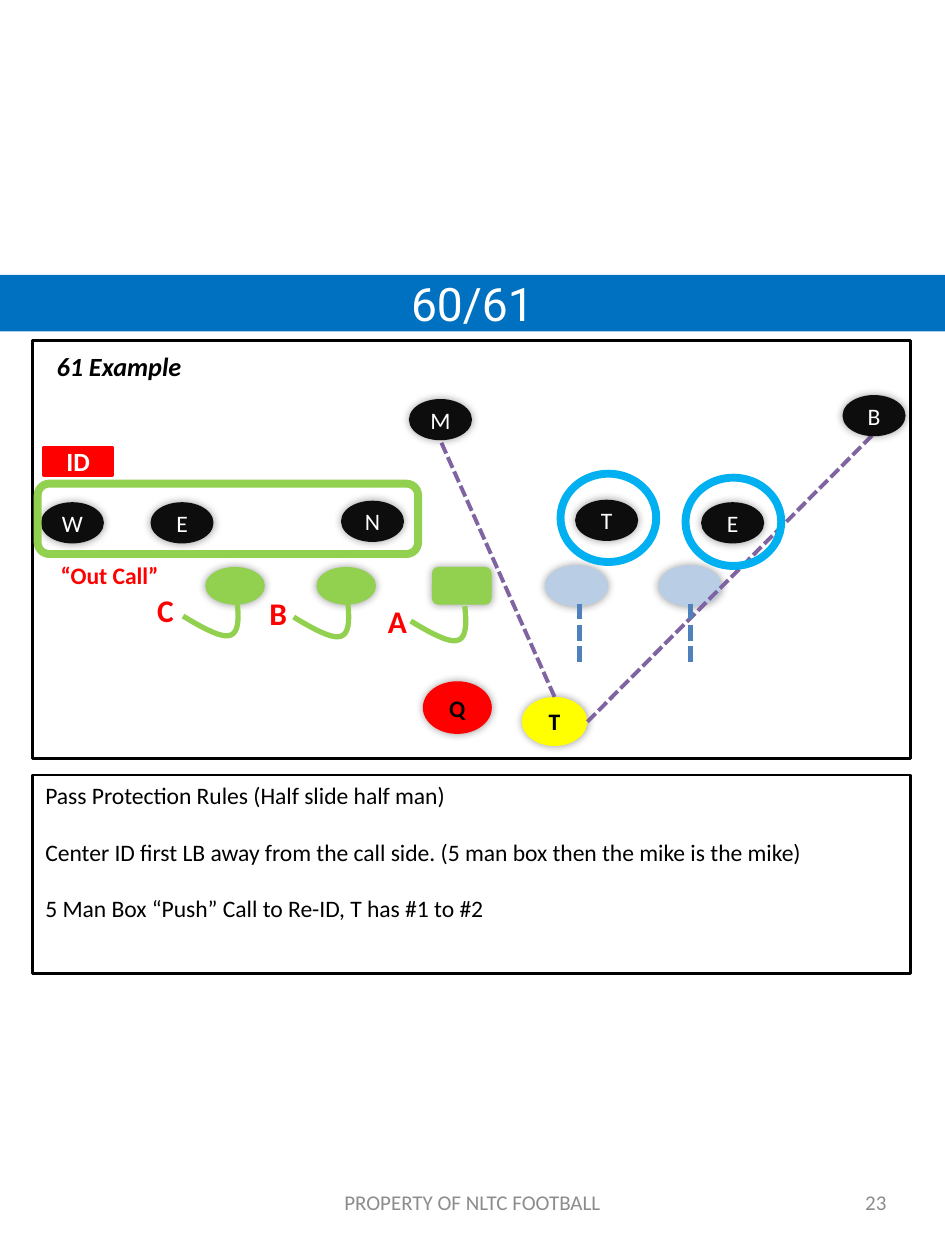
import pptx
import pptx.util
import pptx.dml.color
import pptx.enum.dml
import pptx.enum.shapes
import pptx.enum.text
import pptx.oxml
import pptx.oxml.ns

Cm, Pt = pptx.util.Cm, pptx.util.Pt
KIND = pptx.enum.shapes.MSO_SHAPE
ALIGN = pptx.enum.text.PP_ALIGN
MID = pptx.enum.text.MSO_ANCHOR.MIDDLE
TOP = pptx.enum.text.MSO_ANCHOR.TOP

HUES = {"black": "000000", "white": "FFFFFF", "ink": "0D0D0D", "band": "0070C0",
        "green": "92D050", "pale": "B9CDE5", "red": "FF0000", "yellow": "FFFF00",
        "ring": "00B0F0", "scan": "8064A2", "drop": "4F81BD", "gray": "8C8C8C"}

# Content: all places and sizes in cm
TITLE = "60/61"
RULES = ["Pass Protection Rules (Half slide half man)",
         "Center ID first LB away from the call side. (5 man box then the mike is the mike)",
         "5 Man Box “Push” Call to Re-ID, T has #1 to #2"]
BAND = (0, 5.54, 19.05, 1.14)
FIELD = (0.66, 6.86, 17.7, 8.43)
NOTES = (0.66, 15.62, 17.7, 4.01)
MAN = (1.2, 0.76)
BACK = (1.32, 0.99)
RING = (1.93, 1.78)
LINE_Y = 11.43
LINEMEN = [(4.14, "green", KIND.OVAL), (6.38, "green", KIND.OVAL),
           (8.71, "green", KIND.ROUNDED_RECTANGLE),
           (11.02, "pale", KIND.OVAL), (13.31, "pale", KIND.OVAL)]
BACKS = [("Q", 8.56, 13.77, "red"), ("T", 10.52, 14.05, "yellow")]
DEFENSE = [("W", 0.86, 10.16), ("E", 3.07, 10.16), ("N", 6.91, 10.13),
           ("T", 11.63, 10.11), ("E", 14.17, 10.16), ("M", 8.28, 8.08), ("B", 17.02, 8)]
RINGS = [(11.3, 9.55), (13.82, 9.63)]
SLIDE_BOX = (0.76, 9.75, 7.67, 1.42)
ID_BOX = (0.89, 9.02, 1.37, 0.56)
PATHS = [(11.84, 14.55, 17.6, 8.76, "scan", 2.25), (11.18, 14.05, 8.86, 8.84, "scan", 2.25),
         (11.68, 12.17, 11.68, 13.34, "drop", 3), (13.92, 12.17, 13.92, 13.34, "drop", 3)]
HOOKS = [(9.37, 12.22), (7.01, 12.14), (4.78, 12.12)]
# Two cubic curves, measured from the start of a hook
CURVES = [[(0, 0), (0.03, 0.3), (0.05, 0.64), (-0.15, 0.69)],
          [(-0.15, 0.69), (-0.33, 0.74), (-0.71, 0.53), (-1.09, 0.3)]]
GAP = (0.86, 1.02)
# Text, box, size, hue, bold, italic, alignment, anchor
LABELS = [("61 Example", (0.89, 6.93, 3.25, 0.89), 15, "black", True, True, ALIGN.LEFT, TOP),
          ("A", (7.57, 12.01, *GAP), 18, "red", True, False, ALIGN.LEFT, TOP),
          ("B", (5.18, 11.86, *GAP), 18, "red", True, False, ALIGN.LEFT, TOP),
          ("C", (2.92, 11.79, *GAP), 18, "red", True, False, ALIGN.LEFT, TOP),
          ("“Out Call”", (0.43, 11.18, 3.56, 0.84), 13.5, "red", True, False, ALIGN.CENTER, MID),
          ("PROPERTY OF NLTC FOOTBALL", (6.5, 23.55, 6.05, 1.35), 12, "gray", False, False,
           ALIGN.CENTER, MID),
          ("23", (13.67, 23.55, 4.45, 1.35), 12, "gray", False, False, ALIGN.RIGHT, MID)]


def hue(name):
    return pptx.dml.color.RGBColor.from_string(HUES[name])


def place(shape, box):
    shape.left, shape.top, shape.width, shape.height = [Cm(v) for v in box]


def paint(shape, fill=None, line=None, width=2):
    if fill:
        shape.fill.solid()
        shape.fill.fore_color.rgb = hue(fill)
    else:
        shape.fill.background()
    if line:
        shape.line.color.rgb = hue(line)
        shape.line.width = Pt(width)
    else:
        shape.line.fill.background()


def write(para, text, size, color, bold=False, italic=False, align=ALIGN.CENTER, font="Calibri"):
    para.alignment = align
    run = para.add_run()
    run.text = text
    run.font.name, run.font.size = font, Pt(size)
    run.font.bold, run.font.italic = bold, italic
    run.font.color.rgb = hue(color)


def add(kind, box, fill=None, line=None, width=2, glow=False):
    shape = page.shapes.add_shape(kind, *[Cm(v) for v in box])
    paint(shape, fill, line, width)
    shape.shadow.inherit = False
    if glow:
        effects = shape._element.spPr.find(pptx.oxml.ns.qn("a:effectLst"))
        effects.append(pptx.oxml.parse_xml(
            f'<a:outerShdw {pptx.oxml.ns.nsdecls("a")} blurRad="63500" dist="0" dir="0">'
            f'<a:srgbClr val="{HUES["black"]}"><a:alpha val="40000"/></a:srgbClr></a:outerShdw>'))
    return shape


def badge(shape, text, size, color, bold=False):
    frame = shape.text_frame
    frame.margin_left = frame.margin_right = frame.margin_top = frame.margin_bottom = 0
    frame.word_wrap, frame.vertical_anchor = False, MID
    write(frame.paragraphs[0], text, size, color, bold)


def bend(curve, t):
    weights = ((1 - t) ** 3, 3 * t * (1 - t) ** 2, 3 * t * t * (1 - t), t ** 3)
    return [sum(w * p[i] for w, p in zip(weights, curve)) for i in (0, 1)]


deck = pptx.Presentation()
deck.slide_width, deck.slide_height = Cm(19.05), Cm(25.4)
page = deck.slides.add_slide(deck.slide_layouts[1])

# Title band
title = page.shapes.title
place(title, BAND)
paint(title, "band")
title.text_frame.auto_size = pptx.enum.text.MSO_AUTO_SIZE.NONE
title.text_frame.vertical_anchor = MID
write(title.text_frame.paragraphs[0], TITLE, 26.4, "white", font="Roboto")

# Rules
body = page.placeholders[1]
place(body, NOTES)
paint(body, "white", "black", 1.5)
body.text_frame.auto_size = pptx.enum.text.MSO_AUTO_SIZE.NONE
for i, rule in enumerate(RULES):
    para = body.text_frame.add_paragraph() if i else body.text_frame.paragraphs[0]
    write(para, rule, 13.5, "black", align=ALIGN.LEFT)
    para.space_before, para.space_after = Pt(0), Pt(16)
    props = para._p.get_or_add_pPr()
    props.set("marL", "0")
    props.set("indent", "0")
    props.append(pptx.oxml.parse_xml(f'<a:buNone {pptx.oxml.ns.nsdecls("a")}/>'))

# Field and offense
add(KIND.RECTANGLE, FIELD, "white", "black", 1.5)
for x, color, kind in LINEMEN:
    add(kind, (x, LINE_Y, *MAN), color, "pale" if color == "pale" else None, glow=True)
for name, x, y, color in BACKS:
    edge = "red" if color == "red" else None
    badge(add(KIND.OVAL, (x, y, *BACK), color, edge, glow=True), name, 13.5, "black", True)

# Dashed paths
for x1, y1, x2, y2, color, width in PATHS:
    path = page.shapes.add_connector(pptx.enum.shapes.MSO_CONNECTOR.STRAIGHT,
                                     Cm(x1), Cm(y1), Cm(x2), Cm(y2))
    path.line.color.rgb = hue(color)
    path.line.width = Pt(width)
    path.line.dash_style = pptx.enum.dml.MSO_LINE.SQUARE_DOT
    path._element.spPr.append(pptx.oxml.parse_xml(
        f'<a:effectLst {pptx.oxml.ns.nsdecls("a")}/>'))

# Defense
for name, x, y in DEFENSE:
    badge(add(KIND.OVAL, (x, y, *MAN), "ink", "ink", glow=True), name, 13.5, "white")
add(KIND.ROUNDED_RECTANGLE, SLIDE_BOX, None, "green", 4.5)
for x, y in RINGS:
    add(KIND.OVAL, (x, y, *RING), None, "ring", 4.5)
badge(add(KIND.RECTANGLE, ID_BOX, "red", "red"), "ID", 15, "white", True)

# Blocking hooks
steps = [bend(curve, n / 12) for curve in CURVES for n in range(1, 13)]
for x, y in HOOKS:
    pen = page.shapes.build_freeform(Cm(x), Cm(y))
    pen.add_line_segments([(Cm(x + dx), Cm(y + dy)) for dx, dy in steps], close=False)
    hook = pen.convert_to_shape()
    paint(hook, None, "green", 3)
    hook.shadow.inherit = False

# Labels and footer
for text, box, size, color, bold, italic, align, anchor in LABELS:
    frame = page.shapes.add_textbox(*[Cm(v) for v in box]).text_frame
    frame.word_wrap, frame.vertical_anchor = True, anchor
    write(frame.paragraphs[0], text, size, color, bold, italic, align)

deck.save("out.pptx")
